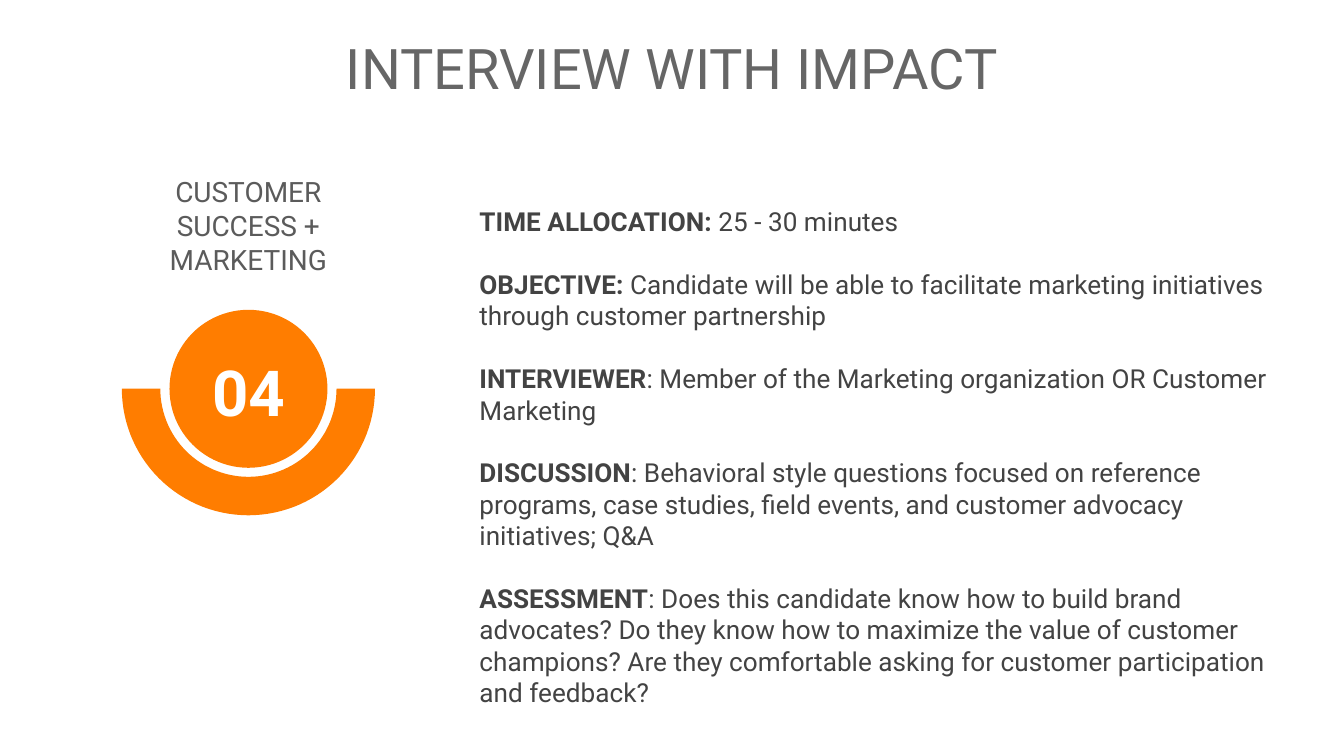
from math import cos, pi, sin

from pptx import Presentation
from pptx.dml.color import RGBColor
from pptx.enum import shapes, text
from pptx.util import Pt

ORANGE = RGBColor(0xFF, 0x7D, 0x00)
WHITE = RGBColor(0xFF, 0xFF, 0xFF)
GREY = RGBColor(0x66, 0x66, 0x66)
SLATE = RGBColor(0x5B, 0x5B, 0x5B)
DARK = RGBColor(0x43, 0x43, 0x43)
FONT = "Roboto"
MID = text.PP_ALIGN.CENTER
TOP = text.MSO_ANCHOR.TOP

ITEMS = [
    ("TIME ALLOCATION:", " 25 - 30 minutes"),
    ("OBJECTIVE:", " Candidate will be able to facilitate marketing initiatives "
     "through customer partnership"),
    ("INTERVIEWER", ": Member of the Marketing organization OR Customer Marketing"),
    ("DISCUSSION", ": Behavioral style questions focused on reference programs, "
     "case studies, field events, and customer advocacy initiatives; Q&A"),
    ("ASSESSMENT", ": Does this candidate know how to build brand advocates? "
     "Do they know how to maximize the value of customer champions? "
     "Are they comfortable asking for customer participation and feedback?"),
]


def write(shape, paras, size, color, align=None, anchor=TOP, pad=(7.2, 7.2), gap=0):
    """Fill a shape with paragraphs, each a list of (words, bold) runs."""
    frame = shape.text_frame
    frame.word_wrap = True
    frame.auto_size = text.MSO_AUTO_SIZE.NONE
    frame.vertical_anchor = anchor
    frame.margin_left = frame.margin_right = Pt(pad[0])
    frame.margin_top = frame.margin_bottom = Pt(pad[1])
    for i, runs in enumerate(paras):
        para = frame.add_paragraph() if i else frame.paragraphs[0]
        para.alignment = align
        para.space_before = Pt(gap if i else 0)
        for words, bold in runs:
            run = para.add_run()
            run.text = words
            font = run.font
            font.name, font.size, font.bold = FONT, Pt(size), bold
            font.color.rgb = color


def label(slide, box, paras, size, color, **form):
    """Add a text box at the given box."""
    shape = slide.shapes.add_textbox(*map(Pt, box))
    write(shape, paras, size, color, **form)


def paint(shape):
    """Give a shape a plain orange fill."""
    shape.shadow.inherit = False
    shape.fill.solid()
    shape.fill.fore_color.rgb = ORANGE
    shape.line.fill.background()


def title(slide, box, words):
    """Place the slide title."""
    shape = slide.shapes.title
    shape.left, shape.top, shape.width, shape.height = map(Pt, box)
    write(shape, [[(words, False)]], 30, GREY, align=MID)


def ring(slide, mid_x, mid_y, outer, inner):
    """Draw the lower half of a ring."""
    turns = [pi * i / 60 for i in range(61)]
    arcs = [(outer, a) for a in turns] + [(inner, a) for a in reversed(turns)]
    dots = [(Pt(mid_x + r * cos(a)), Pt(mid_y + r * sin(a))) for r, a in arcs]
    path = slide.shapes.build_freeform(*dots[0])
    path.add_line_segments(dots[1:], close=True)
    paint(path.convert_to_shape())


def badge(slide, box, name, number):
    """Draw the numbered disc in its half ring, with the name above."""
    left, top, width, height = box
    outer = width / 2
    mid_x, mid_y = left + outer, top + height - outer
    ring(slide, mid_x, mid_y, outer, 47.2)
    disc = 42.3
    paint(slide.shapes.add_shape(
        shapes.MSO_SHAPE.OVAL, Pt(mid_x - disc), Pt(mid_y - disc),
        Pt(2 * disc), Pt(2 * disc)))
    label(slide, (mid_x - 45.3, top, 90.6, 57.6), [[(name, False)]], 15, SLATE,
          align=MID, anchor=text.MSO_ANCHOR.BOTTOM, pad=(2.9, 1.4))
    label(slide, (mid_x - 25.2, mid_y - 21, 50.4, 44), [[(number, True)]], 34, WHITE,
          align=MID, anchor=text.MSO_ANCHOR.MIDDLE, pad=(2.9, 1.4))


def details(slide, box, items):
    """Place the list of interview details."""
    paras = [[(head, True), (body, False)] for head, body in items]
    label(slide, box, paras, 14, DARK, gap=16.8)


def main():
    """Build and save the slide."""
    deck = Presentation()
    deck.slide_width, deck.slide_height = Pt(720), Pt(405)
    slide = deck.slides.add_slide(deck.slide_layouts[5])
    badge(slide, (65.3, 91.5, 135.6, 184.6), "CUSTOMER SUCCESS + MARKETING", "04")
    title(slide, (0, 10.8, 720, 51), "INTERVIEW WITH IMPACT")
    details(slide, (249.8, 103, 437, 303), ITEMS)
    deck.save("out.pptx")


if __name__ == "__main__":
    main()
